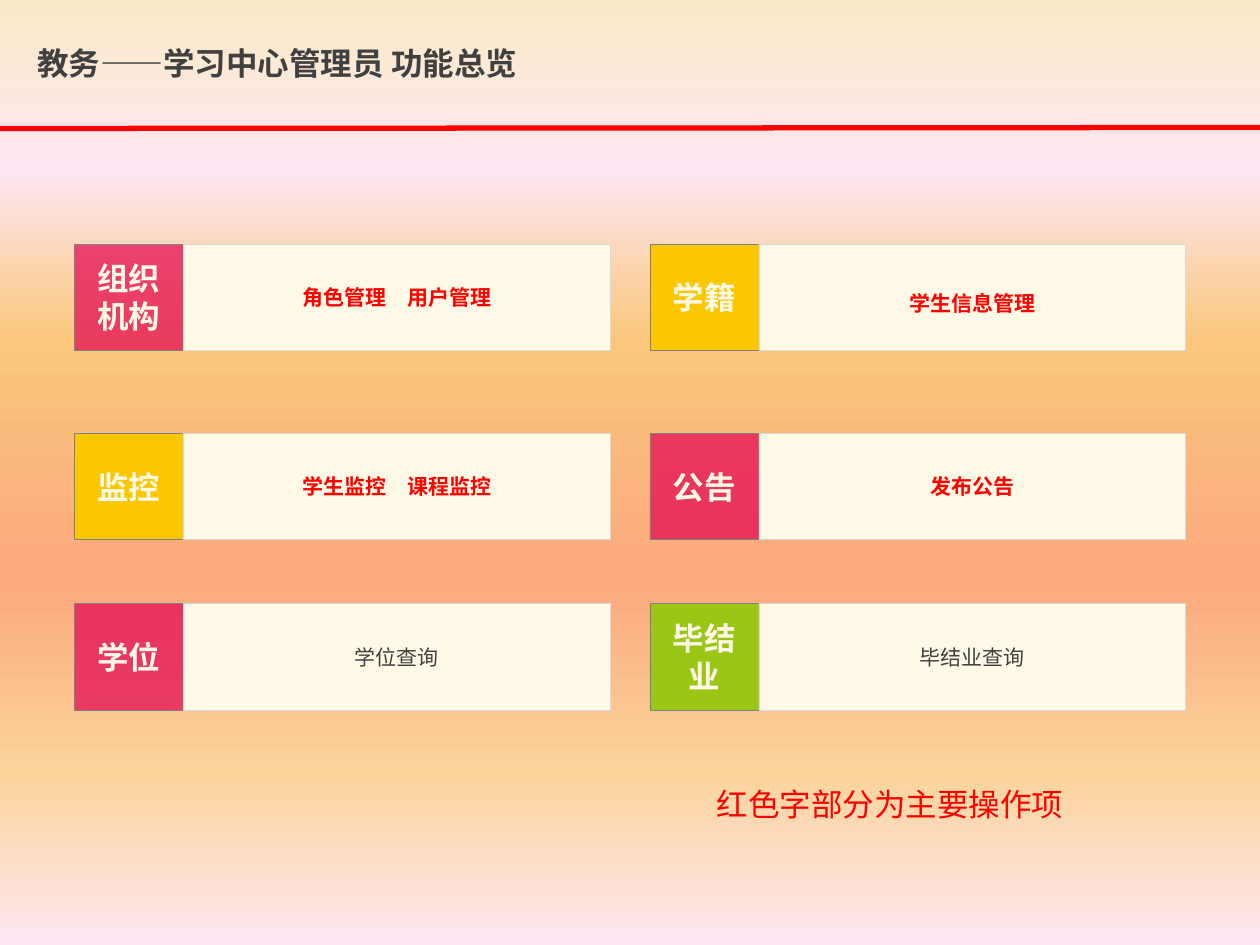
from lxml import etree
from pptx import Presentation
from pptx import util as u
from pptx.dml.color import RGBColor
from pptx.enum import shapes, text
from pptx.oxml.ns import qn

FONT = "Noto Sans CJK SC"
RED, PINK, YELLOW, GREEN = "FF0000", "E4014F", "FAC700", "9BC616"
CREAM, DARK, GREY, PALE_GREY = "FFF9E7", "404040", "808080", "D9D9D9"
BACKGROUND = [(0, "FBEAC7"), (18, "FEE7F2"), (36, "FAC77D"),
              (61, "FBA97D"), (82, "FBD49C"), (100, "FEE7F2")]

LEFT, COLUMN_PITCH = 1.5, 11.6
ROW_TOPS = (4.92, 8.74, 12.17)
TAG_WIDTH, DETAIL_WIDTH, ROW_HEIGHT = 2.2, 8.6, 2.14

# tag, tag colour, opacity in percent, functions, text colour, line spacing
ROWS = [
    [("组织机构", PINK, 70, "角色管理　用户管理", RED, 1),
     ("学籍", YELLOW, 100, "学生信息管理", RED, 1.5)],
    [("监控", YELLOW, 100, "学生监控　课程监控", RED, 1),
     ("公告", PINK, 70, "发布公告", RED, 1)],
    [("学位", PINK, 70, "学位查询", DARK, 1),
     ("毕结业", GREEN, 100, "毕结业查询", DARK, 1)],
]


def color(value):
    return RGBColor.from_string(value)


def place(shape, left, top, width, height):
    shape.left, shape.top = u.Cm(left), u.Cm(top)
    shape.width, shape.height = u.Cm(width), u.Cm(height)


def write(shape, words, size=18, ink=DARK, bold=False, spacing=1, wrap=True,
          align=text.PP_ALIGN.LEFT, anchor=text.MSO_ANCHOR.TOP):
    frame = shape.text_frame
    frame.word_wrap = wrap
    frame.vertical_anchor = anchor
    para = frame.paragraphs[0]
    para.alignment = align
    para.line_spacing = spacing
    span = para.add_run()
    span.text = words
    span.font.name, span.font.size, span.font.bold = FONT, u.Pt(size), bold
    span.font.color.rgb = color(ink)
    east_asian = etree.SubElement(span.font._element, qn("a:ea"))
    east_asian.set("typeface", FONT)


def paint_background(page):
    fill = page.background.fill
    fill.gradient()
    fill.gradient_angle = 270
    stops = fill._fill._gradFill.find(qn("a:gsLst"))
    for stop in list(stops):
        stops.remove(stop)
    for position, value in BACKGROUND:
        stop = etree.SubElement(stops, qn("a:gs"), pos=str(position * 1000))
        etree.SubElement(stop, qn("a:srgbClr"), val=value)


def add_title(page, words):
    title = page.shapes.title
    place(title, 0.5, 0.76, 10.62, 1.02)
    write(title, words, bold=True, wrap=False)
    title.text_frame.auto_size = text.MSO_AUTO_SIZE.SHAPE_TO_FIT_TEXT


def add_rule(page):
    rule = page.shapes.add_connector(shapes.MSO_CONNECTOR.STRAIGHT,
                                     0, u.Cm(2.59), u.Cm(25.4), u.Cm(2.57))
    rule.line.color.rgb, rule.line.width = color(RED), u.Pt(3)
    etree.SubElement(rule._element.spPr, qn("a:effectLst"))


def add_box(page, words, left, top, width, fill, outline, opacity=100, **style):
    box = page.shapes.add_shape(shapes.MSO_SHAPE.RECTANGLE, 0, 0, 0, 0)
    place(box, left, top, width, ROW_HEIGHT)
    box.shadow.inherit = False
    box.fill.solid()
    box.fill.fore_color.rgb = color(fill)
    if opacity < 100:
        tint = box._element.spPr.find(qn("a:solidFill"))[0]
        etree.SubElement(tint, qn("a:alpha"), val=str(opacity * 1000))
    box.line.color.rgb, box.line.width = color(outline), u.Pt(0.25)
    write(box, words, align=text.PP_ALIGN.CENTER,
          anchor=text.MSO_ANCHOR.MIDDLE, **style)


def add_module(page, left, top, module):
    """Add a coloured tag with its list of functions to the right."""
    tag, tag_fill, opacity, functions, ink, spacing = module
    add_box(page, tag, left, top, TAG_WIDTH, tag_fill, GREY, opacity,
            ink=CREAM, bold=True)
    add_box(page, functions, left + TAG_WIDTH, top, DETAIL_WIDTH, CREAM,
            PALE_GREY, size=12, ink=ink, bold=ink == RED, spacing=spacing)


def add_note(page, words):
    note = page.shapes.add_textbox(0, 0, 0, 0)
    place(note, 14.2, 15.7, 9.1, 1.02)
    write(note, words, ink=RED)
    note.text_frame.auto_size = text.MSO_AUTO_SIZE.SHAPE_TO_FIT_TEXT


def main():
    deck = Presentation()
    deck.slide_width, deck.slide_height = u.Cm(25.4), u.Cm(19.05)
    page = deck.slides.add_slide(deck.slide_layouts[5])
    paint_background(page)
    add_rule(page)
    for top, modules in zip(ROW_TOPS, ROWS):
        for column, module in enumerate(modules):
            add_module(page, LEFT + column * COLUMN_PITCH, top, module)
    add_title(page, "教务——学习中心管理员 功能总览")
    add_note(page, "红色字部分为主要操作项")
    deck.save("out.pptx")


if __name__ == "__main__":
    main()
